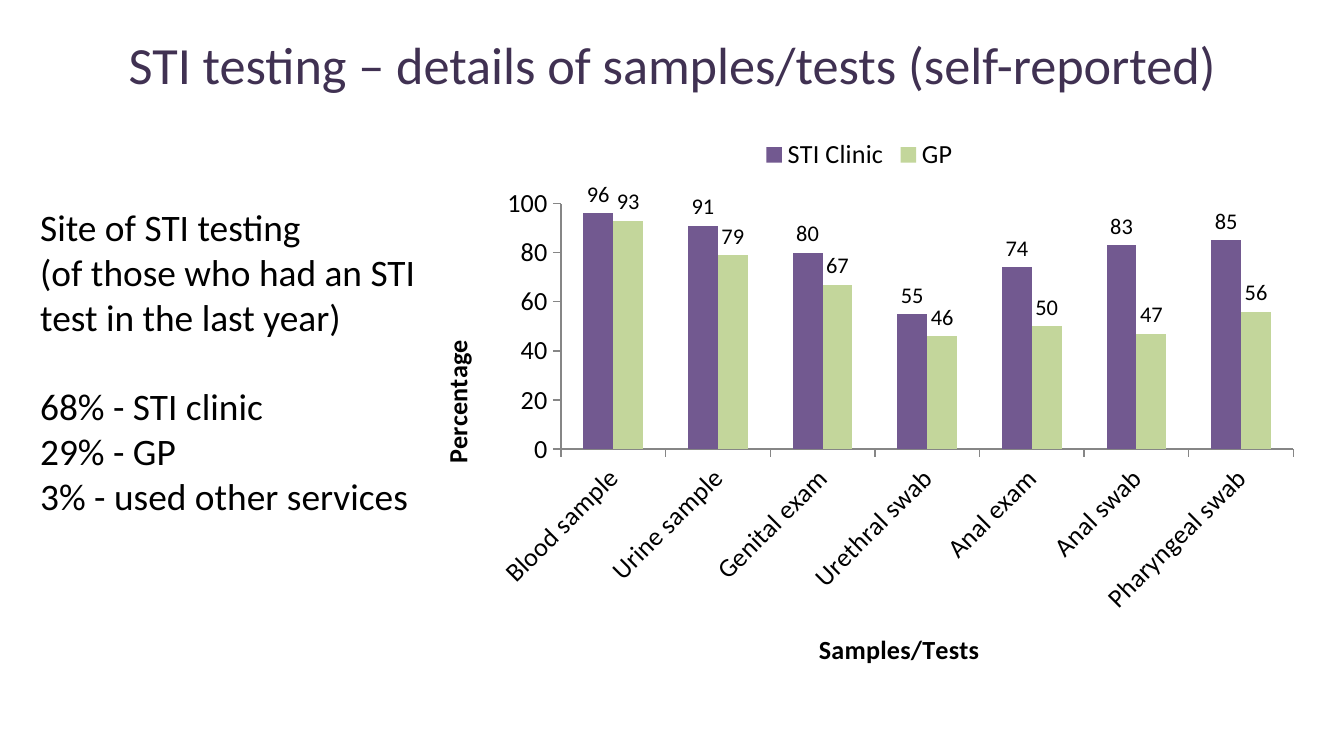
"""Build a slide comparing STI samples and tests by testing site."""
from typing import NamedTuple

from lxml.etree import SubElement
from pptx import Presentation
from pptx.chart.data import CategoryChartData
from pptx.dml.color import RGBColor
from pptx.enum.chart import XL_CHART_TYPE, XL_LABEL_POSITION, XL_LEGEND_POSITION, XL_TICK_MARK
from pptx.enum.text import MSO_ANCHOR, PP_ALIGN
from pptx.oxml.ns import qn
from pptx.util import Inches, Pt

FONT = "Calibri"
COLORS = {"title": "403152", "text": "000000", "clinic": "725990", "gp": "C3D69B", "axis": "868686"}


class Site(NamedTuple):
    name: str
    color: str
    values: tuple[int, ...]


class Line(NamedTuple):
    text: str
    space_before: int = 0


CATEGORIES = ("Blood sample", "Urine sample", "Genital exam", "Urethral swab",
              "Anal exam", "Anal swab", "Pharyngeal swab")
SITES = (
    Site("STI Clinic", "clinic", (96, 91, 80, 55, 74, 83, 85)),
    Site("GP", "gp", (93, 79, 67, 46, 50, 47, 56)),
)
SUMMARY = (
    Line("Site of STI testing"),
    Line("(of those who had an STI test in the last year)"),
    Line("68% - STI clinic", 24),
    Line("29% - GP"),
    Line("3% - used other services"),
)


def rgb(name: str) -> RGBColor:
    return RGBColor.from_string(COLORS[name])


def style_font(font, size: int, color: str = "text", bold: bool = False) -> None:
    font.name, font.size, font.bold = FONT, Pt(size), bold
    font.color.rgb = rgb(color)


def add_run(p, text: str, size: int, color: str = "text", bold: bool = False) -> None:
    r = p.add_run()
    r.text = text
    style_font(r.font, size, color, bold)


def set_layout(parent, index: int, **fractions: float) -> None:
    for old in parent.findall(qn("c:layout")):
        parent.remove(old)
    layout = SubElement(parent, qn("c:layout"))
    parent.insert(index, layout)
    manual = SubElement(layout, qn("c:manualLayout"))
    if "w" in fractions:
        SubElement(manual, qn("c:layoutTarget")).set("val", "inner")
    for key in ("x", "y"):
        SubElement(manual, qn(f"c:{key}Mode")).set("val", "edge")
    for key, value in fractions.items():
        SubElement(manual, qn(f"c:{key}")).set("val", str(value))


def format_axis(axis, title: str, x: float, y: float, rotation: int) -> None:
    axis.has_major_gridlines = False
    axis.major_tick_mark = XL_TICK_MARK.OUTSIDE
    axis.minor_tick_mark = XL_TICK_MARK.NONE
    axis.format.line.color.rgb = rgb("axis")
    axis.format.line.width = Pt(0.75)
    style_font(axis.tick_labels.font, 14)
    tf = axis.axis_title.text_frame
    add_run(tf.paragraphs[0], title, 14, bold=True)
    element = axis.axis_title._element
    element.find(".//" + qn("a:bodyPr")).set("rot", str(rotation * 60000))
    set_layout(element, 1, x=x, y=y)


def add_title(slide, text: str) -> None:
    s = slide.shapes.title
    s.left, s.top, s.width, s.height = Inches(0), Inches(0), Inches(10), Inches(0.94)
    tf = s.text_frame
    tf.vertical_anchor = MSO_ANCHOR.MIDDLE
    p = tf.paragraphs[0]
    p.alignment = PP_ALIGN.CENTER
    add_run(p, text, 28, "title")


def add_samples_chart(slide) -> None:
    data = CategoryChartData()
    data.categories = CATEGORIES
    for site in SITES:
        data.add_series(site.name, site.values)
    chart = slide.shapes.add_chart(
        XL_CHART_TYPE.COLUMN_CLUSTERED, Inches(3.03), Inches(0.92),
        Inches(6.73), Inches(4.25), data).chart
    style_font(chart.font, 14)
    chart.has_title = False
    chart.has_legend = True
    chart.legend.position = XL_LEGEND_POSITION.TOP
    chart.legend.include_in_layout = False
    style_font(chart.legend.font, 14)

    format_axis(chart.category_axis, "Samples/Tests", 0.45, 0.88, 0)
    format_axis(chart.value_axis, "Percentage", 0.03, 0.37, -90)
    labels = chart.category_axis.tick_labels._element
    labels.find(qn("c:txPr")).find(qn("a:bodyPr")).set("rot", str(-45 * 60000))
    chart.value_axis.minimum_scale = 0
    chart.value_axis.maximum_scale = 100
    chart.value_axis.major_unit = 20

    plot = chart.plots[0]
    plot.gap_width = 150
    plot.overlap = 0
    plot.vary_by_categories = False
    for site, series in zip(SITES, plot.series):
        series.format.fill.solid()
        series.format.fill.fore_color.rgb = rgb(site.color)
        labels = series.data_labels
        labels.show_value = True
        labels.position = XL_LABEL_POSITION.OUTSIDE_END
        style_font(labels.font, 12)
    plot_area = chart._chartSpace.find(".//" + qn("c:plotArea"))
    set_layout(plot_area, 0, x=0.17, y=0.14, w=0.81, h=0.43)


def add_summary(slide) -> None:
    tf = slide.shapes.add_textbox(Inches(0.2), Inches(1.47), Inches(2.99), Inches(2.46)).text_frame
    tf.word_wrap = True
    for i, line in enumerate(SUMMARY):
        p = tf.add_paragraph() if i else tf.paragraphs[0]
        p.space_before = Pt(line.space_before)
        add_run(p, line.text, 20)


def main() -> None:
    prs = Presentation()
    prs.slide_width = Inches(10)
    prs.slide_height = prs.slide_width * 9 // 16
    slide = prs.slides.add_slide(prs.slide_layouts[5])
    add_title(slide, "STI testing – details of samples/tests (self-reported)")
    add_samples_chart(slide)
    add_summary(slide)
    prs.save("out.pptx")


if __name__ == "__main__":
    main()
